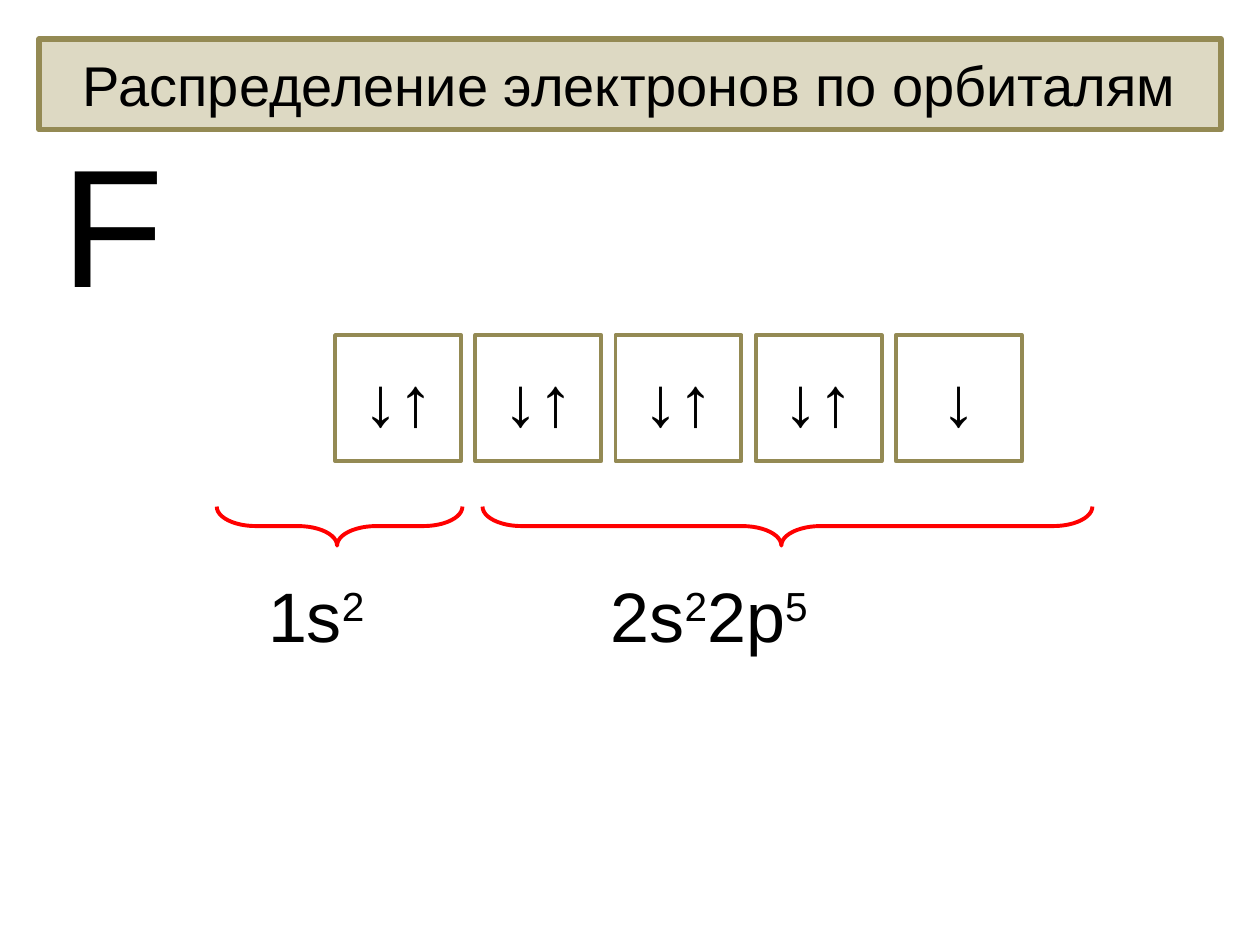
import pptx
import pptx.dml.color
import pptx.enum.shapes
import pptx.enum.text
import pptx.util

Inches = pptx.util.Inches
Pt = pptx.util.Pt
Shape = pptx.enum.shapes.MSO_SHAPE
Align = pptx.enum.text.PP_ALIGN

COLORS = {"text": "000000", "panel": "DDD9C3", "frame": "948A54", "brace": "FF0000"}


def color(name):
    return pptx.dml.color.RGBColor.from_string(COLORS[name])


def write(shape, runs, size, align=Align.CENTER):
    """Fill a shape with (text, is_superscript) runs."""
    frame = shape.text_frame
    frame_format = {
        "word_wrap": True,
        "vertical_anchor": pptx.enum.text.MSO_ANCHOR.MIDDLE,
    }
    for name, value in frame_format.items():
        setattr(frame, name, value)
    paragraph = frame.paragraphs[0]
    paragraph.alignment = align
    for text, superscript in runs:
        run = paragraph.add_run()
        run.text = text
        for name, value in {"name": "Arial", "size": Pt(size)}.items():
            setattr(run.font, name, value)
        run.font.color.rgb = color("text")
        if superscript:
            run._r.get_or_add_rPr().set("baseline", "30000")


def add_outline(shapes, kind, box, line, width, fill=None):
    shape = shapes.add_shape(kind, *map(Inches, box))
    shape.shadow.inherit = False
    if fill:
        shape.fill.solid()
        shape.fill.fore_color.rgb = color(fill)
    else:
        shape.fill.background()
    shape.line.color.rgb = color(line)
    shape.line.width = Pt(width)
    return shape


def add_label(slide, box, runs, size, align=Align.CENTER):
    write(slide.shapes.add_textbox(*map(Inches, box)), runs, size, align)


def add_title(slide, box, text):
    panel = add_outline(slide.shapes, Shape.ROUNDED_RECTANGLE, box, "frame", 3, "panel")
    panel.adjustments[0] = 0
    write(panel, [(text, False)], 32)


def add_orbitals(slide, box, electrons):
    """Spread square cells evenly over the width of the box."""
    left, top, width, side = box
    pitch = (width - side) / (len(electrons) - 1)
    group = slide.shapes.add_group_shape()
    for index, arrows in enumerate(electrons):
        cell_box = (left + index * pitch, top, side, side)
        cell = add_outline(group.shapes, Shape.RECTANGLE, cell_box, "frame", 2.25)
        write(cell, [(arrows, False)], 40)


def add_brace(slide, box):
    """Draw a brace pointing down that covers the box."""
    left, top, width, height = box
    # The brace is upright before it is turned about its centre
    upright = (left + (width - height) / 2, top + (height - width) / 2, height, width)
    brace = add_outline(slide.shapes, Shape.LEFT_BRACE, upright, "brace", 2.25)
    brace.rotation = 270
    brace.adjustments[0] = 1
    brace.adjustments[1] = 0.49


def main():
    presentation = pptx.Presentation()
    presentation.slide_width = Inches(10)
    presentation.slide_height = Inches(7.5)
    slide = presentation.slides.add_slide(presentation.slide_layouts[6])

    # Title and element symbol
    add_title(slide, (0.31, 0.31, 9.38, 0.72), "Распределение электронов по орбиталям")
    add_label(slide, (0.39, 1.25, 1, 1), [("F", False)], 96)

    # Orbital cells
    add_orbitals(slide, (2.66, 2.66, 5.45, 1), ["↓↑"] * 4 + ["↓"])

    # Braces for the two shells
    for left, width in ((3.83, 4.84), (1.72, 1.95)):
        add_brace(slide, (left, 4.02, width, 0.31))

    # Electron configuration
    add_label(slide, (2.01, 4.38, 1, 1), [("1s", False), ("2", True)], 40)
    outer_shell = [("2s", False), ("2", True), ("2p", False), ("5", True)]
    add_label(slide, (4.75, 4.38, 3.24, 1), outer_shell, 40, Align.LEFT)

    presentation.save("out.pptx")


if __name__ == "__main__":
    main()
